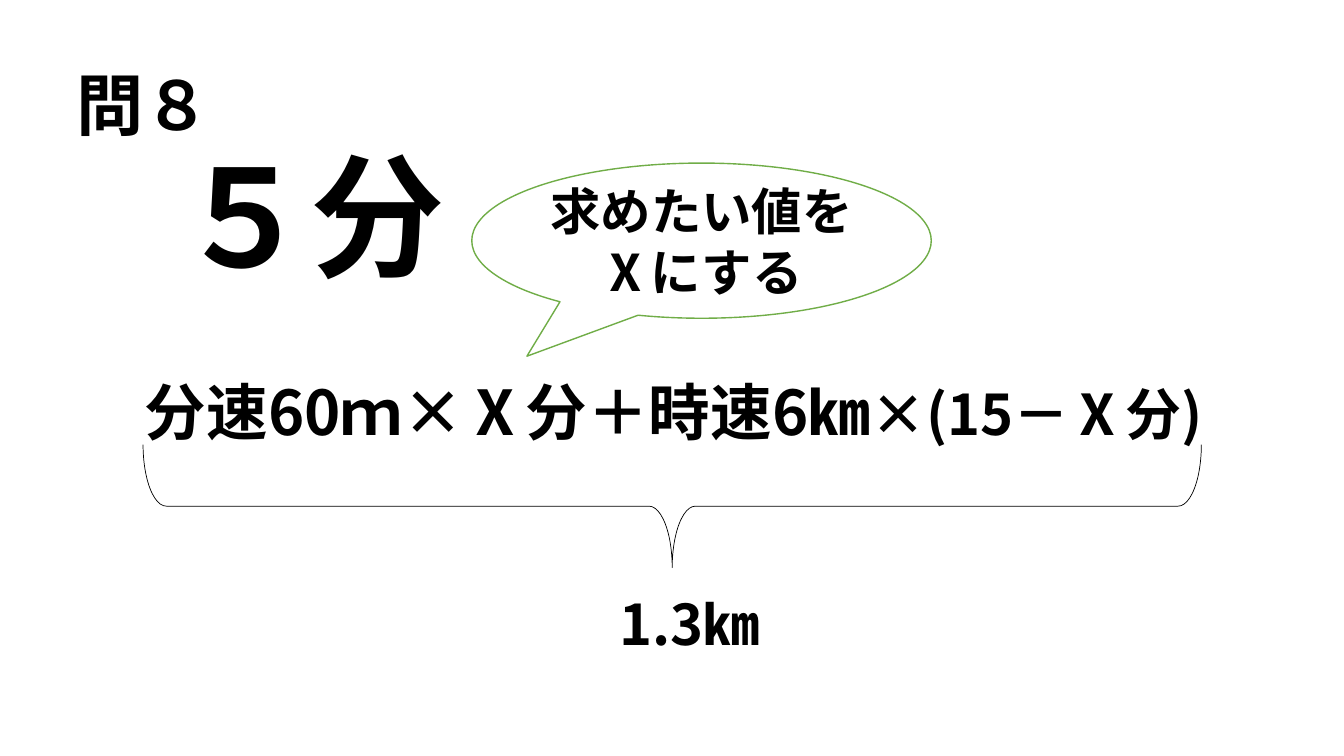
from dataclasses import dataclass

from lxml import etree
from pptx import Presentation
from pptx import util as u
from pptx.dml.color import RGBColor
from pptx.enum import shapes, text
from pptx.oxml import ns


@dataclass(frozen=True)
class Theme:
    """Colours, face and type sizes of the slide."""
    face: str = "Noto Sans CJK JP"
    ink: str = "000000"
    paper: str = "FFFFFF"
    green: str = "70AD47"
    huge: int = 96
    head: int = 48
    sum: int = 44
    body: int = 40
    note: int = 36


LOOK = Theme()
ALIGN = text.PP_ALIGN


def apply(item, form):
    """Set each attribute of item from a dict of format values."""
    for key, value in form.items():
        setattr(item, key, value)


def write(frame, parts, align=ALIGN.LEFT):
    """Fill a frame with one paragraph of bold (words, size) runs."""
    frame.word_wrap = True
    para = frame.paragraphs[0]
    para.alignment = align
    for words, size in parts:
        run = para.add_run()
        run.text = words
        apply(run.font, {"name": LOOK.face, "size": u.Pt(size), "bold": True})
        run.font.color.rgb = RGBColor.from_string(LOOK.ink)
        etree.SubElement(run.font._element, ns.qn("a:ea"), typeface=LOOK.face)


def label(slide, box, parts, align=ALIGN.LEFT):
    """Add a text box that grows with its words."""
    frame = slide.shapes.add_textbox(*map(u.Cm, box)).text_frame
    write(frame, parts, align)
    frame.auto_size = text.MSO_AUTO_SIZE.SHAPE_TO_FIT_TEXT


def outline(slide, kind, box, bends, hue, width):
    """Add an unfilled, lined preset shape with the given adjustments."""
    shape = slide.shapes.add_shape(kind, *map(u.Cm, box))
    shape.shadow.inherit = False
    shape.fill.background()
    shape.line.color.rgb = RGBColor.from_string(hue)
    shape.line.width = u.Pt(width)
    for spot, bend in enumerate(bends):
        shape.adjustments[spot] = bend
    return shape


def brace(slide, box):
    """Add a brace turned to open upwards."""
    shape = outline(slide, shapes.MSO_SHAPE.RIGHT_BRACE, box,
                    (0.189, 0.5), LOOK.ink, 0.5)
    shape.rotation = 90


def bubble(slide, box, words):
    """Add an oval speech bubble with centred words."""
    shape = outline(slide, shapes.MSO_SHAPE.OVAL_CALLOUT, box,
                    (-0.38, 0.745), LOOK.green, 1)
    shape.fill.solid()
    shape.fill.fore_color.rgb = RGBColor.from_string(LOOK.paper)
    shape.text_frame.vertical_anchor = text.MSO_ANCHOR.MIDDLE
    write(shape.text_frame, [(words, LOOK.note)], ALIGN.CENTER)


def main():
    """Build and save the slide."""
    deck = Presentation()
    apply(deck, {"slide_width": u.Cm(33.87), "slide_height": u.Cm(19.05)})
    slide = deck.slides.add_slide(deck.slide_layouts[6])
    label(slide, (1.68, 1.47, 11.58, 2.31), [("問８", LOOK.head)])
    label(slide, (-5.11, 3.23, 25.88, 4.37), [("５分", LOOK.huge)],
          ALIGN.CENTER)
    label(slide, (3.4, 9.3, 34.57, 2.13),
          [("分速60ｍ×Ⅹ分＋時速6㎞", LOOK.sum), ("×(15－Ⅹ分)", LOOK.body)])
    brace(slide, (15.39, -0.58, 3.1, 26.67))
    label(slide, (15.37, 14.73, 14.17, 1.96), [("1.3㎞", LOOK.body)])
    bubble(slide, (11.89, 4.11, 11.58, 3.91), "求めたい値をⅩにする")
    deck.save("out.pptx")


if __name__ == "__main__":
    main()
